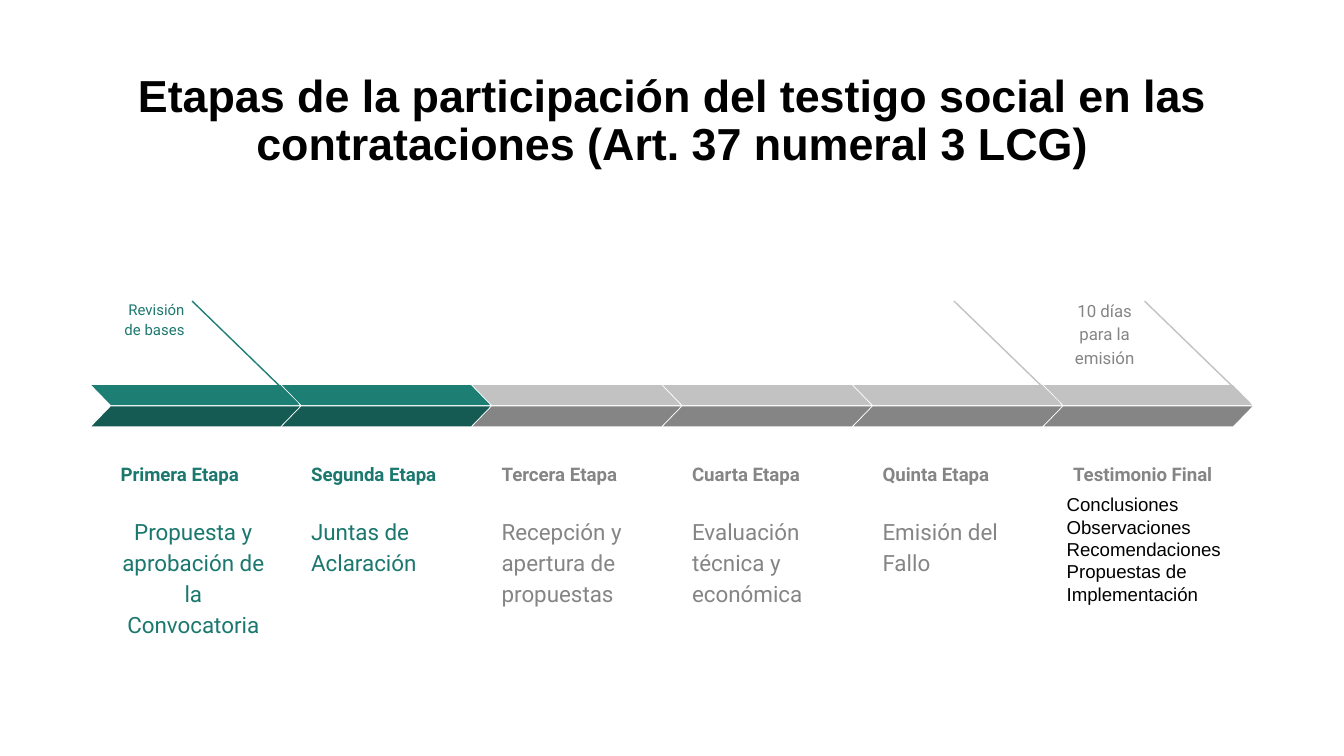
import pptx
import pptx.util
import pptx.dml.color
import pptx.enum.shapes
import pptx.enum.text
import pptx.oxml
import pptx.oxml.ns
from dataclasses import dataclass

Cm = pptx.util.Cm
Pt = pptx.util.Pt
RGBColor = pptx.dml.color.RGBColor
Align = pptx.enum.text.PP_ALIGN
Anchor = pptx.enum.text.MSO_ANCHOR

BLACK = RGBColor(0x00, 0x00, 0x00)
TEAL = RGBColor(0x1D, 0x7E, 0x74)
DARK_TEAL = RGBColor(0x15, 0x5B, 0x54)
TEXT_TEAL = RGBColor(0x1B, 0x78, 0x6E)
LIGHT_GRAY = RGBColor(0xC2, 0xC2, 0xC2)
GRAY = RGBColor(0x85, 0x85, 0x85)

TITLE = "Etapas de la participación del testigo social en las contrataciones (Art. 37 numeral 3 LCG)"
STAGE_PITCH = 3.6
CONCLUSIONS = ["Conclusiones Observaciones", "Recomendaciones", "Propuestas de", "Implementación"]


@dataclass
class Stage:
    """Content of one stage of the timeline."""
    heading: str
    detail: str = ""
    active: bool = False
    pointer: bool = False
    detail_align: Align = Align.LEFT


STAGES = [
    Stage("Primera Etapa", "Propuesta y aprobación de la Convocatoria", True, True, Align.CENTER),
    Stage("Segunda Etapa", "Juntas de Aclaración", True),
    Stage("Tercera Etapa", "Recepción y apertura de propuestas"),
    Stage("Cuarta Etapa", "Evaluación técnica y económica"),
    Stage("Quinta Etapa", "Emisión del Fallo", pointer=True),
    Stage("Testimonio Final", pointer=True),
]


def format_text(frame, lines, size, color, font="Roboto", bold=False,
                align=Align.LEFT, anchor=Anchor.TOP, spacing=1.15):
    """Fill a text frame with one paragraph per line and format it."""
    frame.word_wrap = True
    frame.auto_size = pptx.enum.text.MSO_AUTO_SIZE.NONE
    frame.vertical_anchor = anchor
    frame.margin_left = frame.margin_right = Cm(0.25)
    frame.margin_top = frame.margin_bottom = Cm(0.25)
    frame.text = "\n".join(lines)
    for paragraph in frame.paragraphs:
        paragraph.alignment = align
        paragraph.line_spacing = spacing
        for run in paragraph.runs:
            run.font.name = font
            run.font.size = Pt(size)
            run.font.bold = bold
            run.font.color.rgb = color


def add_label(slide, box, lines, size, color, **style):
    """Add a text box at the box (left, top, width, height) in centimetres."""
    label = slide.shapes.add_textbox(*map(Cm, box))
    format_text(label.text_frame, lines, size, color, **style)


def add_arrow_half(slide, box, color, flipped):
    """Add one slanted half of a stage arrow."""
    half = slide.shapes.add_shape(pptx.enum.shapes.MSO_SHAPE.PARALLELOGRAM, *map(Cm, box))
    half.adjustments[0] = 0.97
    half.shadow.inherit = False
    half.fill.solid()
    half.fill.fore_color.rgb = color
    half.line.fill.background()
    if flipped:
        half.element.spPr.find(pptx.oxml.ns.qn("a:xfrm")).set("flipH", "1")


def add_pointer(slide, left, top, color):
    """Add the slanted line that leads down to the tip of a stage arrow."""
    pointer = slide.shapes.add_connector(
        pptx.enum.shapes.MSO_CONNECTOR.STRAIGHT,
        Cm(left), Cm(top), Cm(left + 1.99), Cm(top + 1.93))
    pointer.line.color.rgb = color
    pointer.line.width = Pt(0.75)
    effects = pptx.oxml.parse_xml(f'<a:effectLst {pptx.oxml.ns.nsdecls("a")}/>')
    pointer.element.spPr.append(effects)


def add_title(slide, box):
    """Place and format the title placeholder."""
    title = slide.shapes.title
    title.left, title.top, title.width, title.height = map(Cm, box)
    format_text(title.text_frame, [TITLE], 24, BLACK, font="Arial", bold=True,
                align=Align.CENTER, anchor=Anchor.MIDDLE, spacing=0.9)


def add_stage(slide, stage, left, top):
    """Add pointer, arrow, heading and detail of a stage."""
    upper, lower, ink = (TEAL, DARK_TEAL, TEXT_TEAL) if stage.active else (LIGHT_GRAY, GRAY, GRAY)
    if stage.pointer:
        add_pointer(slide, left + 1.9, top, upper)
    add_arrow_half(slide, (left, top + 1.59, 3.94, 0.38), upper, True)
    add_arrow_half(slide, (left, top + 1.99, 3.94, 0.38), lower, False)
    add_label(slide, (left + 0.3, top + 2.59, 3.25, 1.14), [stage.heading], 10, ink,
              bold=True, anchor=Anchor.BOTTOM)
    if stage.detail:
        add_label(slide, (left + 0.3, top + 3.78, 3.25, 1.9), [stage.detail], 12, ink,
                  align=stage.detail_align)


def add_timeline(slide, left, top):
    """Add all stages, the notes above the ends and the final conclusions."""
    for index, stage in enumerate(STAGES):
        add_stage(slide, stage, left + index * STAGE_PITCH, top)
    final_left = left + (len(STAGES) - 1) * STAGE_PITCH
    add_label(slide, (left + 0.28, top - 0.31, 1.73, 0.64), ["Revisión de bases"], 8,
              TEXT_TEAL, align=Align.RIGHT)
    add_label(slide, (final_left + 0.28, top - 0.31, 1.73, 0.64), ["10 días para la emisión"], 9,
              GRAY, align=Align.CENTER)
    add_label(slide, (final_left + 0.18, top + 3.38, 3.63, 1.9), CONCLUSIONS, 10, BLACK,
              font="Arial", spacing=1.0)


def main():
    """Build and save the presentation."""
    deck = pptx.Presentation()
    deck.slide_width, deck.slide_height = Cm(25.4), Cm(14.29)
    slide = deck.slides.add_slide(deck.slide_layouts[5])
    add_title(slide, (1.75, 1.1, 21.9, 2.4))
    add_timeline(slide, 1.73, 5.69)
    deck.save("out.pptx")


if __name__ == "__main__":
    main()
